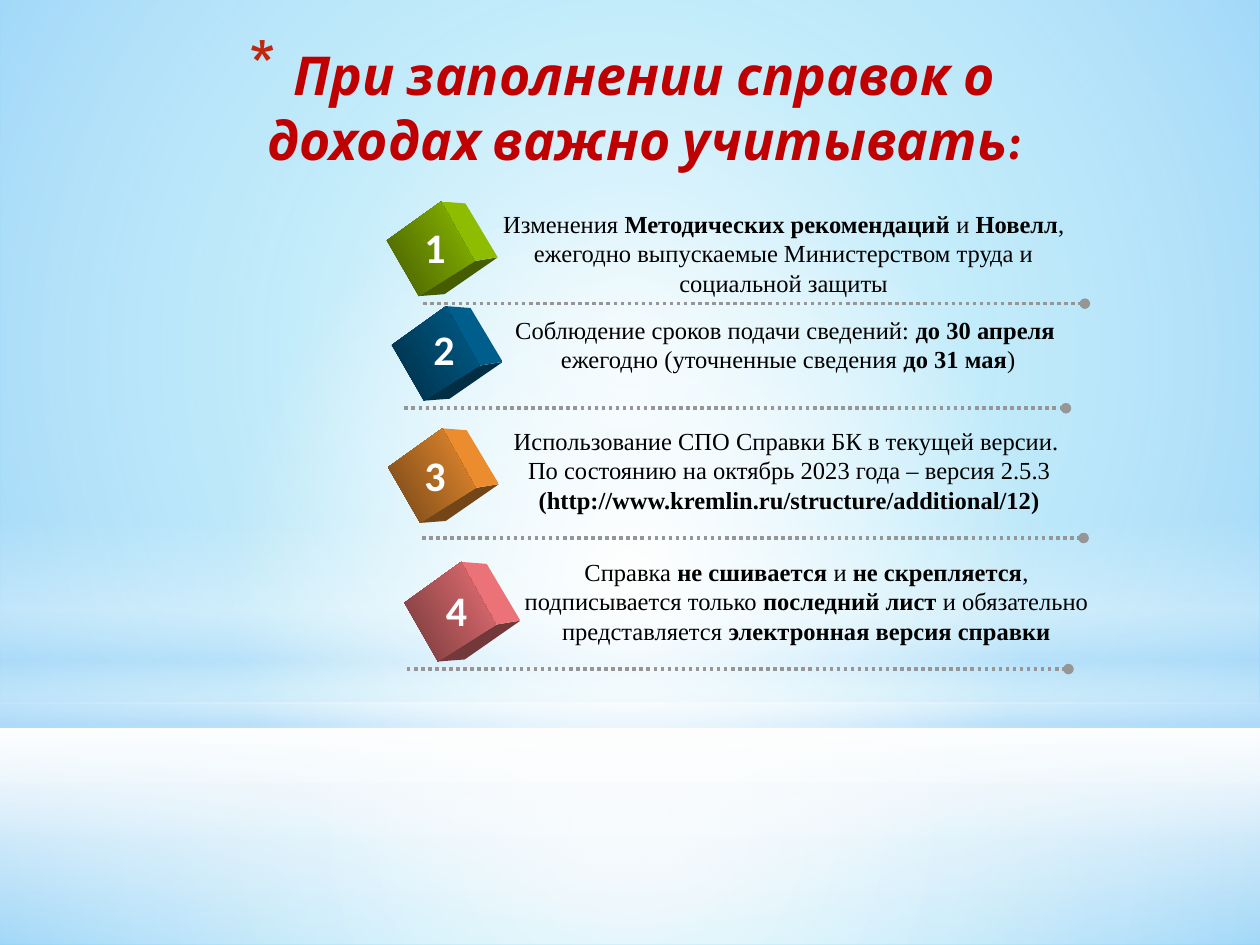
import dataclasses

import pptx
import pptx.dml.color
import pptx.enum.dml
import pptx.enum.shapes
import pptx.enum.text
import pptx.oxml
import pptx.oxml.ns
import pptx.util
from pptx.util import Inches

RGBColor = pptx.dml.color.RGBColor
SKY = RGBColor(0x5E, 0xCC, 0xF3)
PALE = RGBColor(0xB4, 0xDC, 0xFA)
MIST = RGBColor(0xF6, 0xF7, 0xFC)
WHITE = RGBColor(0xFF, 0xFF, 0xFF)
BLACK = RGBColor(0x00, 0x00, 0x00)
GREY = RGBColor(0x96, 0x96, 0x96)
RED = RGBColor(0xC0, 0x00, 0x00)
BULLET_RED = RGBColor(0xC3, 0x26, 0x0C)
GREEN = RGBColor(0x99, 0xCC, 0x00)
BLUE = RGBColor(0x00, 0x66, 0x99)
ORANGE = RGBColor(0xFF, 0x99, 0x33)
PINK = RGBColor(0xFF, 0x7C, 0x80)

RADIAL = ('<a:path path="circle"><a:fillToRect l="50000" t="50000" '
          'r="50000" b="50000"/></a:path>')
CUBE_FRONT = ((0, 0.41), (0.49, 0), (0.79, 0.63), (0.29, 1))
CUBE_SIDE = ((0.49, 0), (0.71, 0.02), (1, 0.59), (0.79, 0.63))
CUBE_BASE = ((0.29, 1), (0.79, 0.63), (1, 0.59), (0.52, 0.98))


@dataclasses.dataclass
class Item:
    """One numbered point; boxes are (left, top, width, height) in inches."""
    color: RGBColor
    cube: tuple
    number_at: tuple
    text_box: tuple
    line_at: tuple
    paragraphs: tuple


ITEMS = (
    Item(GREEN, (3.07, 1.6, 0.88, 0.75), (3.27, 1.71), (3.77, 1.61, 4.9, 0.81), (3.36, 2.41),
         ("Изменения *Методических рекомендаций *и *Новелл*, ежегодно выпускаемые "
          "Министерством труда и социальной защиты",)),
    Item(BLUE, (3.11, 2.43, 0.88, 0.75), (3.34, 2.52), (3.97, 2.45, 4.57, 0.57), (3.21, 3.24),
         ("Соблюдение сроков подачи сведений: *до 30 апреля ",
          "ежегодно (уточненные сведения *до 31 мая*)")),
    Item(ORANGE, (3.08, 3.4, 0.88, 0.75), (3.27, 3.52), (3.96, 3.33, 4.61, 0.81), (3.35, 4.27),
         ("Использование СПО Справки БК в текущей версии. ",
          "По состоянию на октябрь 2023 года – версия 2.5.3",
          "*(http://www.kremlin.ru/structure/additional/12)")),
    Item(PINK, (3.21, 4.46, 0.92, 0.79), (3.44, 4.59), (3.94, 4.37, 4.92, 0.81), (3.23, 5.31),
         ("Справка *не сшивается *и *не скрепляется*, подписывается только "
          "*последний лист* и обязательно представляется *электронная версия справки",)),
)


def shade(color, factor):
    """Return the colour darkened by a factor."""
    return RGBColor(*(round(channel * factor) for channel in color))


def fill_gradient(shape, stops, direction):
    """Fill a shape with (position, colour, opacity) stops and no outline."""
    shape.shadow.inherit = False
    shape.line.fill.background()
    shape.fill.background()
    stop_xml = "".join(
        f'<a:gs pos="{position * 1000}"><a:srgbClr val="{color}">'
        f'<a:alpha val="{opacity * 1000}"/></a:srgbClr></a:gs>'
        for position, color, opacity in stops)
    gradient = pptx.oxml.parse_xml(
        f'<a:gradFill {pptx.oxml.ns.nsdecls("a")} rotWithShape="1">'
        f'<a:gsLst>{stop_xml}</a:gsLst>{direction}</a:gradFill>')
    properties = shape.element.spPr
    properties.replace(properties.find(pptx.oxml.ns.qn("a:noFill")), gradient)


def linear(degrees):
    """Return the direction element of a linear gradient."""
    return f'<a:lin ang="{degrees * 60000}" scaled="0"/>'


def add_backdrop(slide):
    """Lay the translucent sky and floor panels over the background."""
    slide.background.fill.solid()
    slide.background.fill.fore_color.rgb = SKY
    rectangle = pptx.enum.shapes.MSO_SHAPE.RECTANGLE
    oval = pptx.enum.shapes.MSO_SHAPE.OVAL
    panels = (
        (rectangle, 5.58, 1.92, ((0, WHITE, 91), (37, WHITE, 76), (100, PALE, 79)), RADIAL),
        (rectangle, 0, 5.58, ((0, WHITE, 89), (48, WHITE, 62), (100, PALE, 79)), RADIAL),
        (rectangle, 4.12, 2.5, ((0, WHITE, 0), (29, WHITE, 30), (45, PALE, 40),
                                (55, WHITE, 26), (65, PALE, 60), (100, WHITE, 0)), linear(90)),
        (oval, 1.75, 5.58, ((0, WHITE, 100), (56, WHITE, 0)), RADIAL),
        (rectangle, 5.78, 1.72, ((0, WHITE, 100), (100, MIST, 0)), linear(90)),
    )
    for kind, top, height, stops, direction in panels:
        panel = slide.shapes.add_shape(kind, 0, Inches(top), Inches(10), Inches(height))
        fill_gradient(panel, stops, direction)


def add_title(slide, box):
    """Place the starred title in front of the backdrop."""
    title = slide.shapes.title
    title.element.getparent().append(title.element)
    title.left, title.top, title.width, title.height = map(Inches, box)
    frame = title.text_frame
    frame.text = "При заполнении справок о доходах важно учитывать:"
    frame.word_wrap = True
    frame.auto_size = pptx.enum.text.MSO_AUTO_SIZE.NONE
    frame.vertical_anchor = pptx.enum.text.MSO_ANCHOR.MIDDLE
    paragraph = frame.paragraphs[0]
    paragraph.alignment = pptx.enum.text.PP_ALIGN.CENTER
    properties = paragraph._p.get_or_add_pPr()
    properties.set("marL", str(Inches(0.35)))
    properties.set("indent", str(-Inches(0.35)))
    for element in (f'<a:buClr {{}}><a:srgbClr val="{BULLET_RED}"/></a:buClr>',
                    '<a:buSzPct {} val="128000"/>', '<a:buChar {} char="*"/>'):
        properties.append(pptx.oxml.parse_xml(element.format(pptx.oxml.ns.nsdecls("a"))))
    style_font(paragraph.runs[0].font, "Karla", 30.6, RED, True)
    paragraph.runs[0].font.italic = True


def style_font(font, name, size, color, bold):
    """Set the typeface, size, colour and weight of a font."""
    font.name, font.size, font.bold = name, pptx.util.Pt(size), bold
    font.color.rgb = color


def add_cube(shapes, box, color):
    """Draw a tilted cube from three shaded faces within the box."""
    left, top, width, height = box
    faces = ((CUBE_BASE, 0.45, 0.45), (CUBE_SIDE, 0.92, 0.92), (CUBE_FRONT, 0.45, 0.92))
    for corners, dark, light in faces:
        points = [(Inches(left + x * width), Inches(top + y * height)) for x, y in corners]
        builder = shapes.build_freeform(*points[0])
        builder.add_line_segments(points[1:], close=True)
        stops = ((0, shade(color, dark), 100), (100, shade(color, light), 100))
        fill_gradient(builder.convert_to_shape(), stops, linear(330))


def add_divider(shapes, left, top):
    """Draw a dotted line that ends in a dot."""
    line = shapes.add_connector(pptx.enum.shapes.MSO_CONNECTOR.STRAIGHT, Inches(left),
                                Inches(top), Inches(left + 5.25), Inches(top))
    line.line.color.rgb = GREY
    line.line.width = pptx.util.Pt(2)
    line.line.dash_style = pptx.enum.dml.MSO_LINE.ROUND_DOT
    namespace = pptx.oxml.ns.nsdecls("a")
    line.line._get_or_add_ln().append(pptx.oxml.parse_xml(f'<a:tailEnd {namespace} type="oval"/>'))
    line.element.spPr.append(pptx.oxml.parse_xml(f"<a:effectLst {namespace}/>"))


def add_item(slide, number, item):
    """Group the divider, cube, text and number of one point."""
    shapes = slide.shapes.add_group_shape().shapes
    add_divider(shapes, *item.line_at)
    add_cube(shapes, item.cube, item.color)
    frame = shapes.add_textbox(*map(Inches, item.text_box)).text_frame
    frame.word_wrap = len(item.paragraphs) == 1
    for index, text in enumerate(item.paragraphs):
        paragraph = frame.add_paragraph() if index else frame.paragraphs[0]
        paragraph.alignment = pptx.enum.text.PP_ALIGN.CENTER
        for position, part in enumerate(text.split("*")):
            if part:
                run = paragraph.add_run()
                run.text = part
                style_font(run.font, "Times New Roman", 14, BLACK, position % 2 == 1)
    label = shapes.add_textbox(*map(Inches, (*item.number_at, 0.39, 0.5))).text_frame
    label.word_wrap = False
    label.text = str(number)
    style_font(label.paragraphs[0].runs[0].font, "Calibri", 24, WHITE, True)


def main():
    """Build and save the slide."""
    presentation = pptx.Presentation()
    presentation.slide_width, presentation.slide_height = Inches(10), Inches(7.5)
    slide = presentation.slides.add_slide(presentation.slide_layouts[5])
    add_backdrop(slide)
    add_title(slide, (1.21, 0.27, 7.45, 1.15))
    for number, item in enumerate(ITEMS, 1):
        add_item(slide, number, item)
    presentation.save("out.pptx")


if __name__ == "__main__":
    main()
